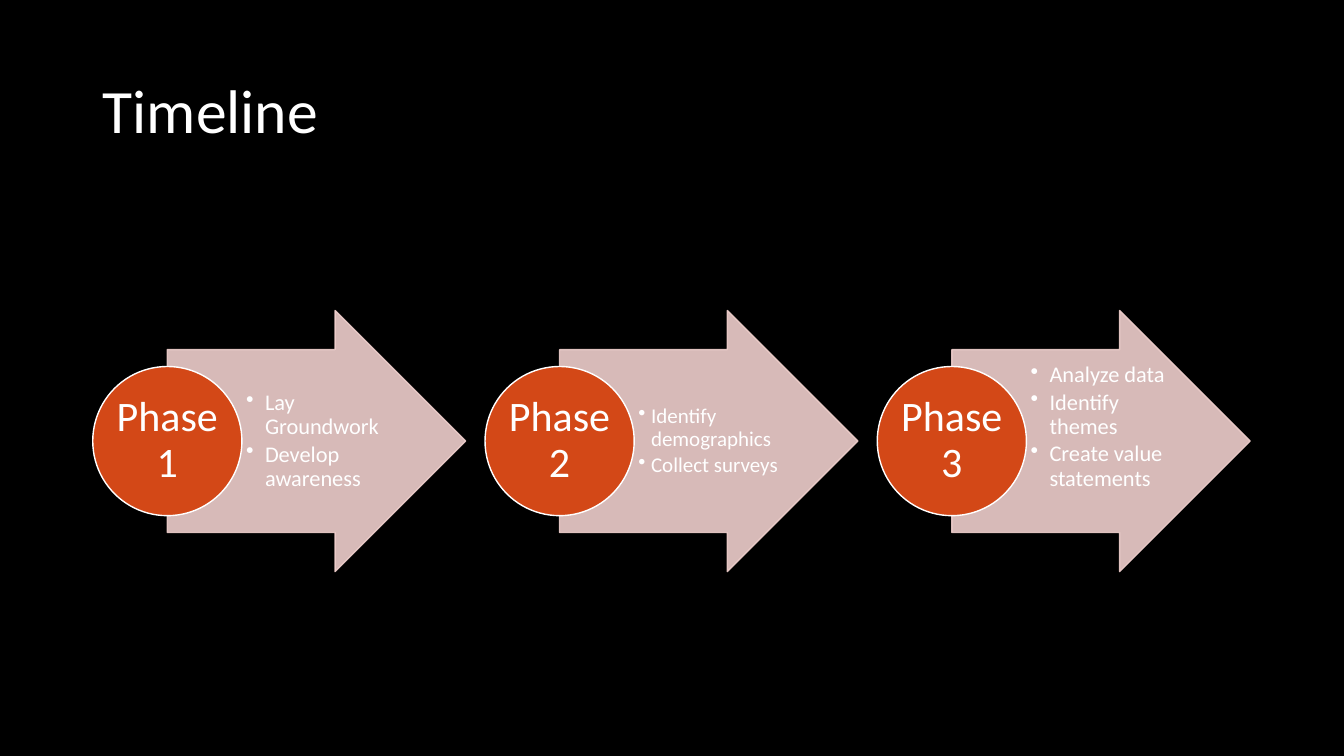
from lxml import etree
from pptx import Presentation
from pptx.dml.color import RGBColor
from pptx.enum.shapes import MSO_SHAPE
from pptx.enum.text import MSO_ANCHOR, MSO_AUTO_SIZE, PP_ALIGN
from pptx.oxml.ns import qn
from pptx.util import Pt

ARROW, CIRCLE = MSO_SHAPE.RIGHT_ARROW, MSO_SHAPE.OVAL
MIDDLE, NO_FIT = MSO_ANCHOR.MIDDLE, MSO_AUTO_SIZE.NONE
LEFT, CENTER = PP_ALIGN.LEFT, PP_ALIGN.CENTER
BLACK, WHITE, ORANGE, PINK = "000000", "FFFFFF", "D34817", "EFCFCC"
TITLE_LAYOUT = 5

# Heading, bullets, bullet size, indent, space kept free below the bullets
PHASES = [
    ("Phase 1", ["Lay Groundwork", "Develop awareness"], 16, 13.5, 1),
    ("Phase 2", ["Identify demographics", "Collect surveys"], 15, 9, 1),
    ("Phase 3", ["Analyze data", "Identify themes", "Create value statements"],
     16, 13.5, 21),
]
MARGIN, PHASE_TOP, PHASE_WIDTH, PHASE_HEIGHT = 66.24, 221.8, 266.4, 186.5
PITCH = 280.2
DIAMETER = 106.56


def rgb(value):
    return RGBColor.from_string(value)


def set_alpha(fill, percent):
    """Make a solid fill partly transparent."""
    color = fill._xPr.find(qn("a:solidFill"))[0]
    etree.SubElement(color, qn("a:alpha")).set("val", str(percent * 1000))


def style_text(para, size, align=LEFT):
    para.alignment = align
    para.line_spacing = 0.9
    para.font.name = "Calibri"
    para.font.size = Pt(size)
    para.font.color.rgb = rgb(WHITE)


def add_bullet(para, indent):
    props = para._p.get_or_add_pPr()
    props.set("marL", str(Pt(indent)))
    props.set("indent", str(-Pt(indent)))
    etree.SubElement(props, qn("a:buChar")).set("char", "•")


def set_frame(frame, left, top, right, bottom):
    frame.word_wrap = True
    frame.auto_size = NO_FIT
    frame.vertical_anchor = MIDDLE
    frame.margin_left, frame.margin_top = Pt(left), Pt(top)
    frame.margin_right, frame.margin_bottom = Pt(right), Pt(bottom)


def add_filled(page, kind, box, fill, line):
    shape = page.shapes.add_shape(kind, *map(Pt, box))
    shape.shadow.inherit = False
    shape.fill.solid()
    shape.fill.fore_color.rgb = rgb(fill)
    shape.line.color.rgb = rgb(line)
    shape.line.width = Pt(1)
    return shape


def add_title(page, box, text):
    title = page.shapes.title
    title.left, title.top, title.width, title.height = map(Pt, box)
    set_frame(title.text_frame, 7.2, 3.6, 7.2, 3.6)
    title.text_frame.text = text
    style_text(title.text_frame.paragraphs[0], 44)


def add_phase(page, box, heading, bullets, size, indent, space_below):
    left, top, width, height = box
    radius = DIAMETER / 2

    # Arrow, starting at the centre of the circle
    arrow = add_filled(page, ARROW, (left + radius, top, width - radius, height),
                       PINK, PINK)
    arrow.adjustments[0], arrow.adjustments[1] = 0.7, 0.5
    set_alpha(arrow.fill, 90)
    set_alpha(arrow.line.fill, 90)

    # Bullets, as high as the arrow's shaft
    notes = page.shapes.add_textbox(
        Pt(left + DIAMETER), Pt(top + 0.15 * height), Pt(104.4), Pt(0.7 * height))
    frame = notes.text_frame
    set_frame(frame, 3, 1, 1.5, space_below)
    frame.text = "\n".join(bullets)
    for para in frame.paragraphs:
        add_bullet(para, indent)
        style_text(para, size)
        para.space_after = Pt(0.15 * size)

    # Circle with the heading
    circle = add_filled(
        page, CIRCLE, (left, top + height / 2 - radius, DIAMETER, DIAMETER),
        ORANGE, WHITE)
    set_frame(circle.text_frame, 1.5, 1.5, 1.5, 1.5)
    circle.text_frame.text = heading
    style_text(circle.text_frame.paragraphs[0], 30, CENTER)


def add_timeline(deck):
    page = deck.slides.add_slide(deck.slide_layouts[TITLE_LAYOUT])
    page.background.fill.solid()
    page.background.fill.fore_color.rgb = rgb(BLACK)
    add_title(page, (MARGIN, 28.8, 828, 104.4), "Timeline")
    for index, phase in enumerate(PHASES):
        box = (MARGIN + index * PITCH, PHASE_TOP, PHASE_WIDTH, PHASE_HEIGHT)
        add_phase(page, box, *phase)


def main():
    deck = Presentation()
    deck.slide_width, deck.slide_height = Pt(960), Pt(540)
    add_timeline(deck)
    deck.save("out.pptx")


if __name__ == "__main__":
    main()
